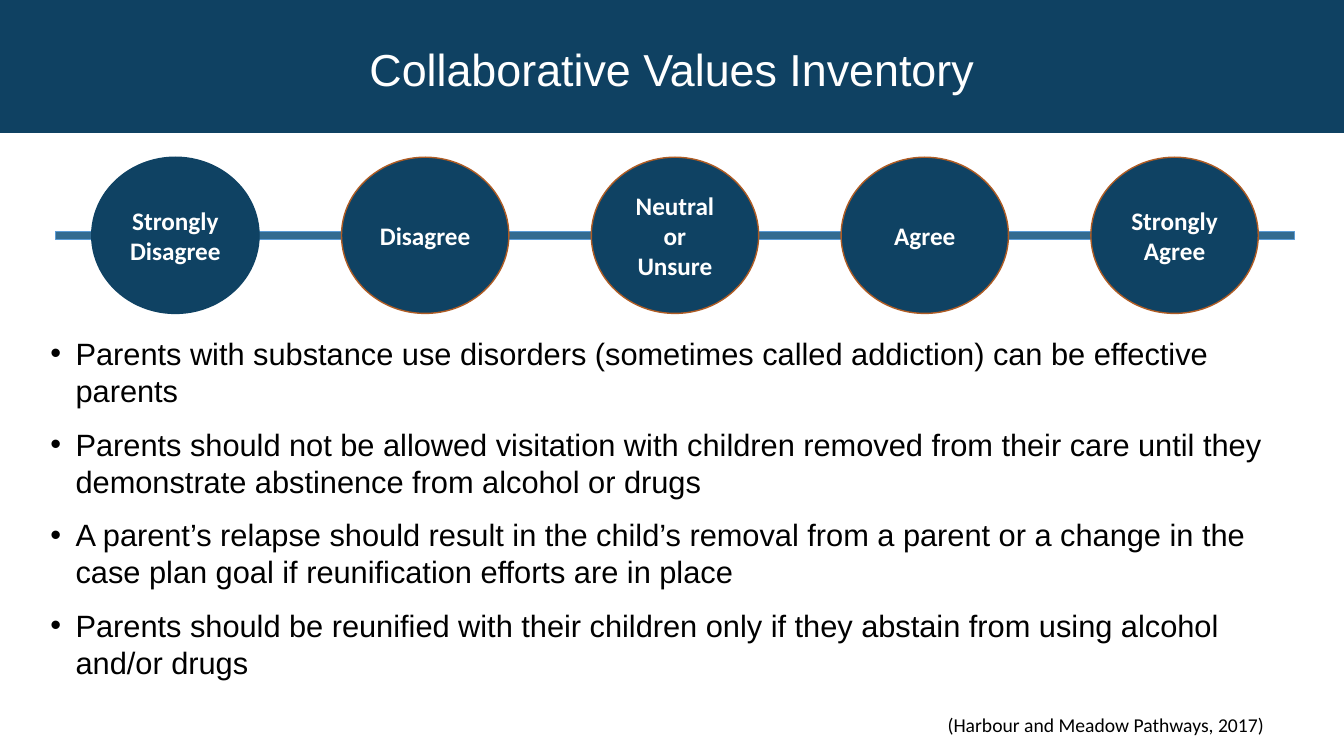
"""Build the Collaborative Values Inventory slide."""
import pptx
import pptx.dml.color
import pptx.enum.shapes
import pptx.enum.text
import pptx.util

RGBColor = pptx.dml.color.RGBColor
Inches = pptx.util.Inches
Pt = pptx.util.Pt
SHAPE = pptx.enum.shapes.MSO_SHAPE
ALIGN = pptx.enum.text.PP_ALIGN
ANCHOR = pptx.enum.text.MSO_ANCHOR

TITLE = "Collaborative Values Inventory"
ANSWERS = ["Strongly Disagree", "Disagree", "Neutral or Unsure", "Agree", "Strongly Agree"]
STATEMENTS = [
    "Parents with substance use disorders (sometimes called addiction) can be effective parents",
    "Parents should not be allowed visitation with children removed from their care until they "
    "demonstrate abstinence from alcohol or drugs",
    "A parent’s relapse should result in the child’s removal from a parent or a change in the "
    "case plan goal if reunification efforts are in place",
    "Parents should be reunified with their children only if they abstain from using alcohol "
    "and/or drugs",
]
CITATION = "(Harbour and Meadow Pathways, 2017)"

BAND_BLUE = RGBColor(0x0F, 0x41, 0x62)
CIRCLE_BLUE = RGBColor(0x0F, 0x42, 0x63)
BAR_BLUE = RGBColor(0x33, 0x6B, 0x90)
BAR_EDGE = RGBColor(0x5B, 0x9B, 0xD5)
RUST = RGBColor(0xAF, 0x5C, 0x24)
WHITE = RGBColor(0xFF, 0xFF, 0xFF)
BLACK = RGBColor(0, 0, 0)

SLIDE_WIDTH, SLIDE_HEIGHT = 13.33, 7.5
BAND_HEIGHT = 1.31
MARGIN = 0.4
CONTENT_WIDTH = SLIDE_WIDTH - 2 * MARGIN
BAR_LEFT, BAR_WIDTH, BAR_HEIGHT = 0.55, 12.29, 0.08
CIRCLE_WIDTH, CIRCLE_HEIGHT = 1.66, 1.55
CIRCLE_TOP = 1.56
FIRST_CIRCLE, LAST_CIRCLE = 0.91, 10.82
CIRCLE_STEP = (LAST_CIRCLE - FIRST_CIRCLE) / (len(ANSWERS) - 1)
BODY_TOP, BODY_BOTTOM = 3.27, 7.0


def place(shape, left, top, width, height):
    shape.left, shape.top = Inches(left), Inches(top)
    shape.width, shape.height = Inches(width), Inches(height)


def add_filled(shapes, kind, box, fill, edge, edge_width=1):
    shape = shapes.add_shape(kind, *map(Inches, box))
    shape.shadow.inherit = False
    shape.fill.solid()
    shape.fill.fore_color.rgb = fill
    shape.line.color.rgb = edge
    shape.line.width = Pt(edge_width)
    return shape


def format_text(paragraph, font_name, size, color, bold=False, align=ALIGN.LEFT, spacing=0):
    paragraph.alignment = align
    paragraph.space_before = paragraph.space_after = Pt(spacing)
    for run in paragraph.runs:
        run.font.name = font_name
        run.font.size = Pt(size)
        run.font.bold = bold
        run.font.color.rgb = color


def add_title(slide):
    title = slide.shapes.title
    place(title, MARGIN, 0.06, CONTENT_WIDTH, BAND_HEIGHT - 0.06)
    title.text_frame.text = TITLE
    title.text_frame.auto_size = pptx.enum.text.MSO_AUTO_SIZE.NONE
    title.text_frame.vertical_anchor = ANCHOR.MIDDLE
    format_text(title.text_frame.paragraphs[0], "Arial", 32, WHITE, align=ALIGN.CENTER, spacing=3)
    band = add_filled(slide.shapes, SHAPE.RECTANGLE, (0, 0, SLIDE_WIDTH, BAND_HEIGHT),
                      BAND_BLUE, BAND_BLUE)
    title.element.addprevious(band.element)


def add_scale(slide):
    scale = slide.shapes.add_group_shape()
    bar_top = CIRCLE_TOP + (CIRCLE_HEIGHT - BAR_HEIGHT) / 2
    add_filled(scale.shapes, SHAPE.RECTANGLE, (BAR_LEFT, bar_top, BAR_WIDTH, BAR_HEIGHT),
               BAR_BLUE, BAR_EDGE, 0.5)
    for index, answer in enumerate(ANSWERS):
        box = (FIRST_CIRCLE + index * CIRCLE_STEP, CIRCLE_TOP, CIRCLE_WIDTH, CIRCLE_HEIGHT)
        circle = add_filled(scale.shapes, SHAPE.OVAL, box, CIRCLE_BLUE,
                            RUST if index else CIRCLE_BLUE)
        circle.text_frame.text = answer
        circle.text_frame.word_wrap = True
        circle.text_frame.vertical_anchor = ANCHOR.MIDDLE
        format_text(circle.text_frame.paragraphs[0], "Calibri", 18, WHITE, True, ALIGN.CENTER)


def add_statements(slide):
    body = slide.placeholders[1]
    place(body, MARGIN, BODY_TOP, CONTENT_WIDTH, BODY_BOTTOM - BODY_TOP)
    body.text_frame.text = "\n".join(STATEMENTS)
    body.text_frame.auto_size = pptx.enum.text.MSO_AUTO_SIZE.NONE
    for paragraph in body.text_frame.paragraphs:
        format_text(paragraph, "Arial", 22, BLACK, spacing=6)
        paragraph.line_spacing = 1.0
        properties = paragraph._p.get_or_add_pPr()
        properties.set("marL", str(Inches(0.25)))
        properties.set("indent", str(Inches(-0.25)))


def add_citation(slide):
    citation = slide.shapes.add_textbox(*map(Inches, (9.3, 7.02, 3.6, 0.34)))
    citation.text_frame.word_wrap = True
    citation.text_frame.text = CITATION
    format_text(citation.text_frame.paragraphs[0], "Calibri", 14, BLACK)


def main():
    presentation = pptx.Presentation()
    presentation.slide_width = Inches(SLIDE_WIDTH)
    presentation.slide_height = Inches(SLIDE_HEIGHT)
    slide = presentation.slides.add_slide(presentation.slide_layouts[1])
    add_title(slide)
    add_scale(slide)
    add_statements(slide)
    add_citation(slide)
    presentation.save("out.pptx")


if __name__ == "__main__":
    main()
